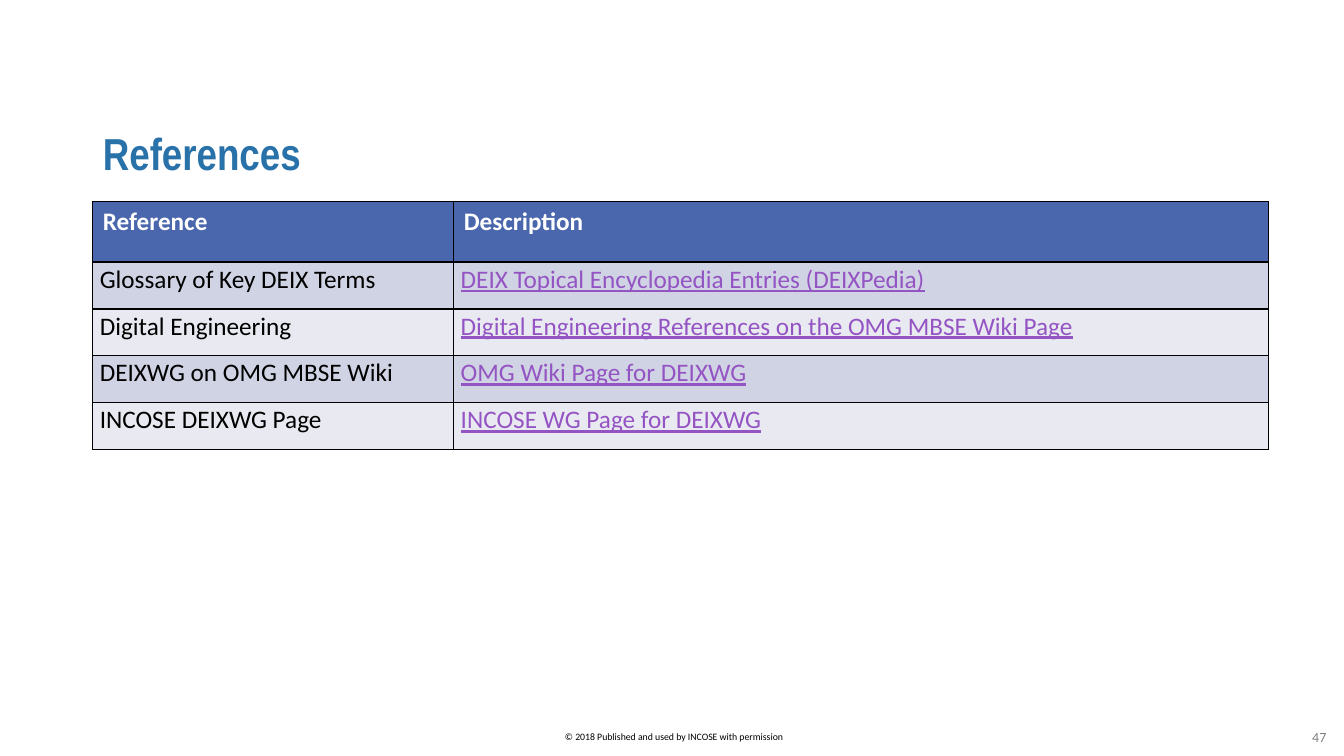
from lxml.etree import SubElement
from pptx import Presentation
from pptx.dml.color import RGBColor
from pptx.enum.text import MSO_ANCHOR, PP_ALIGN
from pptx.oxml.ns import qn
from pptx.util import Inches, Pt

TITLE = "References"
HEADERS = ("Reference", "Description")
REFERENCES = [
    ("Glossary of Key DEIX Terms", "DEIX Topical Encyclopedia Entries (DEIXPedia)"),
    ("Digital Engineering", "Digital Engineering References on the OMG MBSE Wiki Page"),
    ("DEIXWG on OMG MBSE Wiki", "OMG Wiki Page for DEIXWG"),
    ("INCOSE DEIXWG Page", "INCOSE WG Page for DEIXWG"),
]
COPYRIGHT = "© 2018 Published and used by INCOSE with permission"
PAGE_NUMBER = "47"

LEFT, WIDTH = 0.92, 11.67
COLUMN_WIDTHS = (3.58, 8.08)
HEADER_HEIGHT, ROW_HEIGHT = 0.6, 0.465
BLACK, WHITE, GREY = "000000", "FFFFFF", "808080"
TITLE_BLUE, HEADER_BLUE, LINK_PURPLE = "2971A9", "4A66AC", "9454C3"
BANDS = ("D0D3E3", "E9EAF1")


def color(value):
    return RGBColor.from_string(value)


def style(para, size, value, name="Calibri", bold=False, underline=False):
    font = para.font
    font.name, font.size, font.bold = name, Pt(size), bold
    font.underline = underline
    font.color.rgb = color(value)


def add_borders(cell):
    properties = cell._tc.get_or_add_tcPr()
    for side in ("a:lnL", "a:lnR", "a:lnT", "a:lnB"):
        line = SubElement(properties, qn(side), w=str(Pt(1)))
        fill = SubElement(line, qn("a:solidFill"))
        SubElement(fill, qn("a:srgbClr"), val=BLACK)


def fill_cell(cell, text, fill):
    """Write the text, draw the borders and return the paragraph."""
    add_borders(cell)
    cell.fill.solid()
    cell.fill.fore_color.rgb = color(fill)
    cell.text = text
    return cell.text_frame.paragraphs[0]


def add_label(page, text, left, top, width, height, size, value):
    box = page.shapes.add_textbox(Inches(left), Inches(top), Inches(width), Inches(height))
    frame = box.text_frame
    frame.word_wrap = True
    frame.vertical_anchor = MSO_ANCHOR.MIDDLE
    frame.text = text
    para = frame.paragraphs[0]
    para.alignment = PP_ALIGN.CENTER
    style(para, size, value)


def add_title(page):
    title = page.shapes.title
    title.left, title.top = Inches(LEFT), Inches(1.17)
    title.width, title.height = Inches(WIDTH), Inches(0.75)
    title.text = TITLE
    title.text_frame.vertical_anchor = MSO_ANCHOR.MIDDLE
    para = title.text_frame.paragraphs[0]
    para.alignment = PP_ALIGN.LEFT
    para.line_spacing = 0.9
    style(para, 32, TITLE_BLUE, "Arial Narrow", bold=True)


def add_reference_table(page):
    row_count = len(REFERENCES) + 1
    height = HEADER_HEIGHT + ROW_HEIGHT * len(REFERENCES)
    table = page.shapes.add_table(
        row_count, len(HEADERS), Inches(LEFT), Inches(2), Inches(WIDTH), Inches(height)
    ).table
    for column, width in zip(table.columns, COLUMN_WIDTHS):
        column.width = Inches(width)
    for index, row in enumerate(table.rows):
        row.height = Inches(ROW_HEIGHT if index else HEADER_HEIGHT)

    for column, header in enumerate(HEADERS):
        para = fill_cell(table.cell(0, column), header, HEADER_BLUE)
        style(para, 18, WHITE, bold=True)

    for row, reference in enumerate(REFERENCES, start=1):
        for column, text in enumerate(reference):
            cell = table.cell(row, column)
            cell.margin_left = cell.margin_right = Inches(0.07)
            cell.margin_top = cell.margin_bottom = 0
            para = fill_cell(cell, text, BANDS[(row - 1) % 2])
            para.line_spacing = 1.07
            is_link = column == 1
            style(para, 18, LINK_PURPLE if is_link else BLACK, underline=is_link)


def main():
    deck = Presentation()
    deck.slide_width, deck.slide_height = Inches(13.33), Inches(7.5)
    page = deck.slides.add_slide(deck.slide_layouts[5])
    add_label(page, COPYRIGHT, 4.81, 7.2, 3.75, 0.22, 7, BLACK)
    add_title(page)
    add_reference_table(page)
    add_label(page, PAGE_NUMBER, 12.83, 7.11, 0.51, 0.4, 10, GREY)
    deck.save("out.pptx")


if __name__ == "__main__":
    main()
